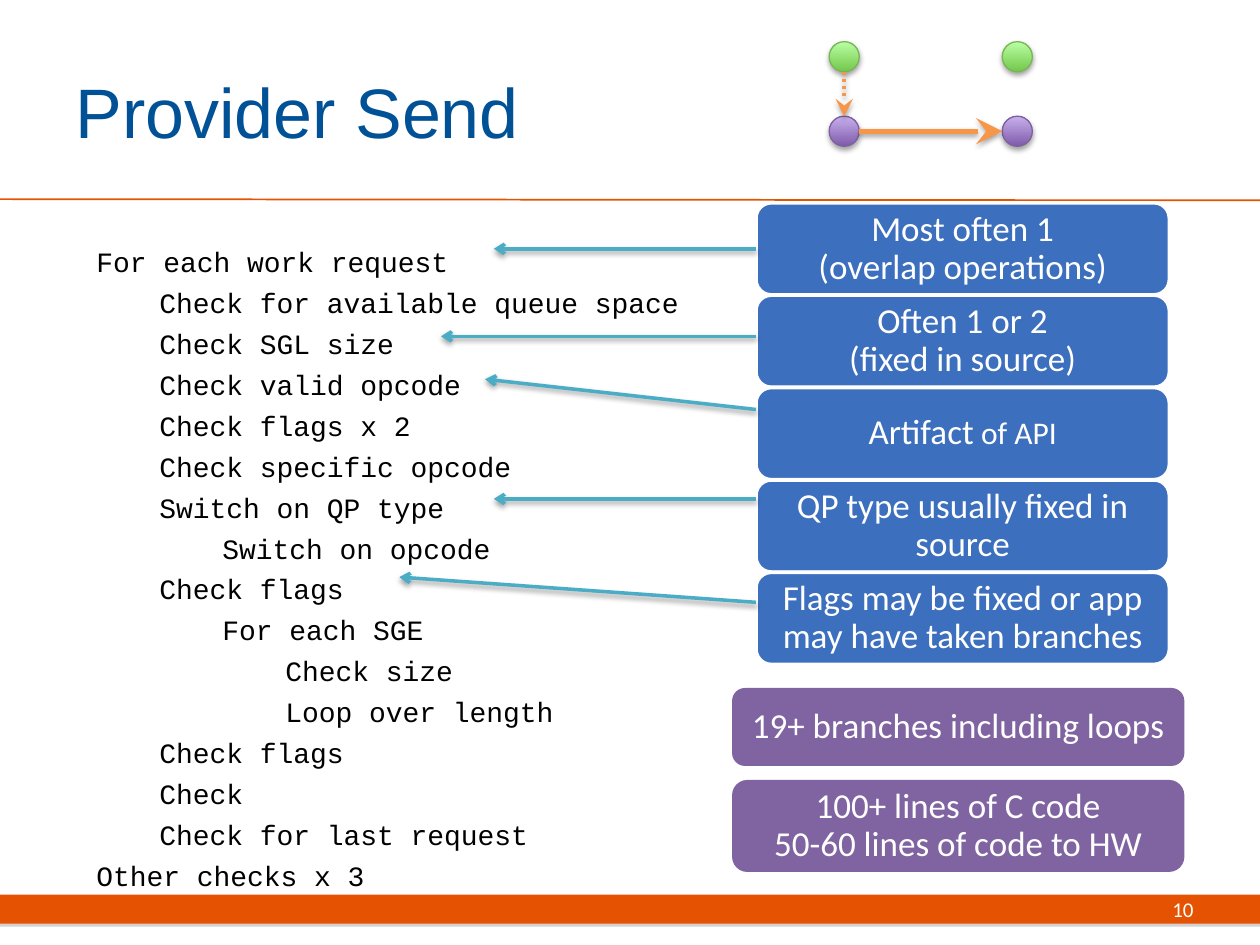
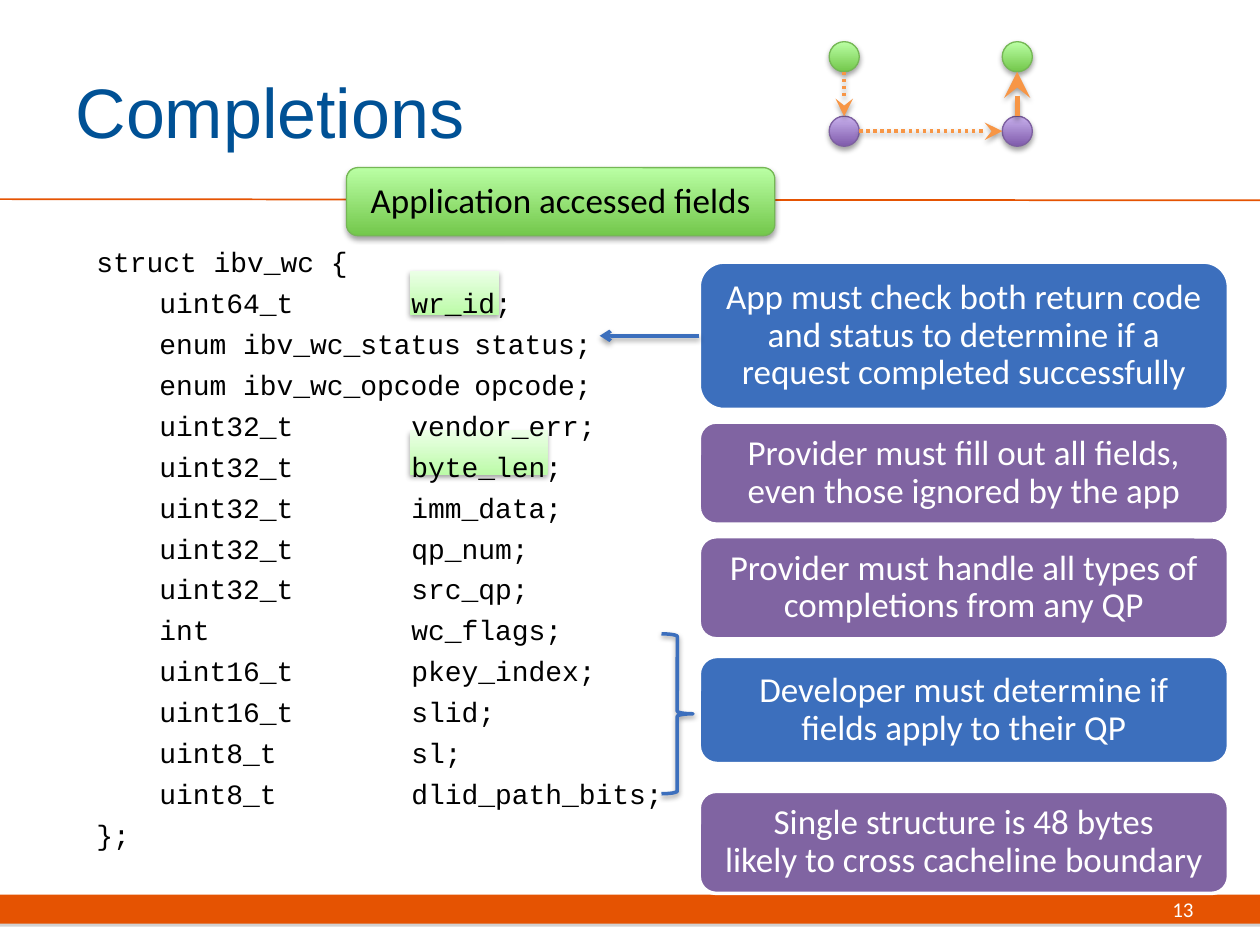
import pptx
import pptx.dml.color
import pptx.enum.dml
import pptx.enum.shapes
import pptx.enum.text
import pptx.oxml.ns
import pptx.util
from dataclasses import dataclass
from lxml import etree

Pt = pptx.util.Pt
qn = pptx.oxml.ns.qn
SHAPE = pptx.enum.shapes.MSO_SHAPE
ALIGN = pptx.enum.text.PP_ALIGN
ANCHOR = pptx.enum.text.MSO_ANCHOR


@dataclass(frozen=True)
class Theme:
    orange: str = "E55302"
    title: str = "005195"
    black: str = "000000"
    white: str = "FFFFFF"
    blue: str = "3C6FBD"
    purple: str = "8064A2"
    teal: str = "4BACC6"
    link: str = "F79646"
    # Gradients run from bottom to top
    green: tuple = ("73C74B", "BAFFA4")
    green_edge: str = "75B755"
    violet: tuple = ("7F5BAB", "C8B0ED")
    violet_edge: str = "7D60A0"
    pale_green: tuple = ("BCFBA8", "ECFFE7")
    # Shadow colour, opacity in percent, blur and distance
    soft_shadow: tuple = ("000000", 36, 3.1, 1.7)
    band_shadow: tuple = ("808080", 35, 0, 1.8)
    title_size: float = 40
    note_size: float = 20
    note_small: float = 18
    code_size: float = 16
    page_size: float = 12
    heading_font: str = "Arial"
    note_font: str = "Calibri"
    code_font: str = "Courier New"


T = Theme()

# Content: provider send
SEND_CODE = [
    "For each work request",
    "\tCheck for available queue space",
    "\tCheck SGL size",
    "\tCheck valid opcode",
    "\tCheck flags x 2",
    "\tCheck specific opcode",
    "\tSwitch on QP type",
    "\t\tSwitch on opcode",
    "\tCheck flags",
    "\t\tFor each SGE",
    "\t\t\tCheck size",
    "\t\t\tLoop over length",
    "\tCheck flags",
    "\tCheck",
    "\tCheck for last request",
    "Other checks x 3",
]
SEND_TABS = [36, 72, 108]
# Note, arrow start height (None: middle of the box), arrow tip
SEND_NOTES = [
    ("Most often 1\v(overlap operations)", None, (282.2, 142.2)),
    ("Often 1 or 2\v(fixed in source)", 192.2, (252, 192.2)),
    ([("Artifact", T.note_size), (" of API", T.note_small)], 234, (277.2, 216.7)),
    ("QP type usually fixed in source", 285.1, (282.2, 285.1)),
    ("Flags may be fixed or app may have taken branches", 344.2, (228.2, 329.8)),
]
SEND_TOTALS = [
    ("19+ branches including loops", 393.1, 44.6),
    ("100+ lines of C code\v50-60 lines of code to HW", 445.7, 52.6),
]

# Content: completions
STRUCT_CODE = [
    "struct ibv_wc {",
    "\tuint64_t\twr_id;",
    "\tenum ibv_wc_status\tstatus;",
    "\tenum ibv_wc_opcode\topcode;",
    "\tuint32_t\tvendor_err;",
    "\tuint32_t\tbyte_len;",
    "\tuint32_t\timm_data;",
    "\tuint32_t\tqp_num;",
    "\tuint32_t\tsrc_qp;",
    "\tint\twc_flags;",
    "\tuint16_t\tpkey_index;",
    "\tuint16_t\tslid;",
    "\tuint8_t\tsl;",
    "\tuint8_t\tdlid_path_bits;",
    "};",
]
STRUCT_TABS = [36, 180, 216]
APP_FIELDS = [(234, 154.6, 51.1, 25.2), (234.4, 246, 78.5, 25.2)]
STATUS_NOTE = "App must check both return code and status to determine if a request completed successfully"
COMPLETION_NOTES = [
    (STATUS_NOTE, T.blue, 149.8, 84.2),
    ("Provider must fill out all fields, even those ignored by the app", T.purple, 241.2, 58.3),
    ("Provider must handle all types of completions from any QP", T.purple, 306.7, 58.3),
    ("Developer must determine if fields apply to their QP", T.blue, 375.1, 61.2),
    ("Single structure is 48 bytes\vlikely to cross cacheline boundary", T.purple, 452.2, 58.3),
]

# Message route: nodes, and links as start, end, active
NODES = {
    "sender app": (482.4, 32.4), "receiver app": (581.3, 32.4),
    "sender": (482.4, 75), "receiver": (581.3, 75),
}
NODE_RADIUS = 8.6
SEND_LINKS = [("sender app", "sender", False), ("sender", "receiver", True)]
COMPLETION_LINKS = [
    ("sender app", "sender", False),
    ("sender", "receiver", False),
    ("receiver", "receiver app", True),
]


# Drawing helpers
def rgb(value):
    return pptx.dml.color.RGBColor.from_string(value)


def style_runs(p, font, size, color):
    for r in p.runs:
        r.font.name, r.font.size = font, Pt(size)
        r.font.color.rgb = rgb(color)


def set_shadow(obj, shadow):
    spPr = obj.element.spPr
    effects = spPr.find(qn("a:effectLst"))
    if effects is None:
        effects = etree.SubElement(spPr, qn("a:effectLst"))
    if shadow:
        color, opacity, blur, dist = shadow
        outer = etree.SubElement(effects, qn("a:outerShdw"), blurRad=str(Pt(blur)),
                                 dist=str(Pt(dist)), dir="5400000", rotWithShape="0")
        clr = etree.SubElement(outer, qn("a:srgbClr"), val=color)
        etree.SubElement(clr, qn("a:alpha"), val=str(opacity * 1000))


def add_shape(s, kind, box, fill=None, edge=None, edge_width=0.75, shadow=None):
    sp = s.shapes.add_shape(kind, *map(Pt, box))
    sp.shadow.inherit = False
    if fill is None:
        sp.fill.background()
    elif isinstance(fill, tuple):
        sp.fill.gradient()
        sp.fill.gradient_angle = 90
        for stop, color in zip(sp.fill.gradient_stops, fill):
            stop.color.rgb = rgb(color)
    else:
        sp.fill.solid()
        sp.fill.fore_color.rgb = rgb(fill)
    if edge:
        sp.line.color.rgb = rgb(edge)
        sp.line.width = Pt(edge_width)
    else:
        sp.line.fill.background()
    set_shadow(sp, shadow)
    return sp


def add_line(s, start, end, color, width, head=None, head_size="med", dotted=False, shadow=None):
    cx = s.shapes.add_connector(pptx.enum.shapes.MSO_CONNECTOR.STRAIGHT, *map(Pt, (*start, *end)))
    cx.line.color.rgb = rgb(color)
    cx.line.width = Pt(width)
    if dotted:
        cx.line.dash_style = pptx.enum.dml.MSO_LINE.ROUND_DOT
    if head:
        etree.SubElement(cx.line._get_or_add_ln(), qn("a:tailEnd"),
                         type=head, w=head_size, len=head_size)
    set_shadow(cx, shadow)
    return cx


def add_note(s, text, box, fill, color=T.white, edge=T.white, edge_width=2, shadow=None):
    sp = add_shape(s, SHAPE.ROUNDED_RECTANGLE, box, fill, edge, edge_width, shadow)
    tf = sp.text_frame
    tf.word_wrap, tf.vertical_anchor = True, ANCHOR.MIDDLE
    tf.margin_left = tf.margin_right = Pt(8.6)
    tf.margin_top = tf.margin_bottom = Pt(5)
    p = tf.paragraphs[0]
    parts = [(text, T.note_size)] if isinstance(text, str) else text
    p.text = parts[0][0]
    for extra, _ in parts[1:]:
        p.add_run().text = extra
    p.alignment, p.line_spacing = ALIGN.CENTER, 0.9
    style_runs(p, T.note_font, T.note_size, color)
    if len(parts) > 1:
        for r, (_, size) in zip(p.runs, parts):
            r.font.size = Pt(size)
    return sp


def add_arrow(s, note, start_y, tip, color):
    left = note.left.pt
    middle = note.top.pt + note.height.pt / 2
    cx = add_line(s, (left, middle if start_y is None else start_y), tip, color, 2,
                  "arrow", shadow=T.soft_shadow)
    if start_y is None:
        cx.begin_connect(note, 1)


def add_code(s, lines, tabs):
    tf = s.shapes.add_textbox(Pt(48), Pt(136), Pt(648), Pt(362)).text_frame
    tf.word_wrap = True
    for i, line in enumerate(lines):
        p = tf.add_paragraph() if i else tf.paragraphs[0]
        tab_list = etree.SubElement(p._p.get_or_add_pPr(), qn("a:tabLst"))
        for pos in tabs:
            etree.SubElement(tab_list, qn("a:tab"), pos=str(Pt(pos)), algn="l")
        p.text = line
        p.space_before = Pt(4.23 if i else 0)
        style_runs(p, T.code_font, T.code_size, T.black)


def add_route(s, links):
    for name, (x, y) in NODES.items():
        fill, edge = (T.green, T.green_edge) if name.endswith("app") else (T.violet, T.violet_edge)
        box = (x - NODE_RADIUS, y - NODE_RADIUS, 2 * NODE_RADIUS, 2 * NODE_RADIUS)
        add_shape(s, SHAPE.FLOWCHART_CONNECTOR, box, fill, edge, shadow=T.soft_shadow)
    for start, end, active in links:
        (x1, y1), (x2, y2) = NODES[start], NODES[end]
        length = abs(x2 - x1) + abs(y2 - y1)
        dx, dy = (NODE_RADIUS * d / length for d in (x2 - x1, y2 - y1))
        add_line(s, (x1 + dx, y1 + dy), (x2 - dx, y2 - dy), T.link, 3 if active else 2,
                 "stealth", "lg", not active, T.soft_shadow)


def add_slide(prs, title, number):
    s = prs.slides.add_slide(prs.slide_layouts[5])
    # Band, rule and page number
    add_shape(s, SHAPE.RECTANGLE, (0, 511.2, 720, 16.6), T.orange, shadow=T.band_shadow)
    add_line(s, (0, 113.8), (720, 114.5), T.orange, 1)
    tf = s.shapes.add_textbox(Pt(603.4), Pt(511.2), Pt(85.7), Pt(16.6)).text_frame
    tf.word_wrap, tf.vertical_anchor = True, ANCHOR.MIDDLE
    tf.margin_top = tf.margin_bottom = 0
    tf.text = str(number)
    tf.paragraphs[0].alignment = ALIGN.RIGHT
    style_runs(tf.paragraphs[0], T.note_font, T.page_size, T.white)
    # Title
    sp = s.shapes.title
    sp.left, sp.top, sp.width, sp.height = map(Pt, (36, 18, 588, 90))
    tf = sp.text_frame
    tf.text = title
    tf.vertical_anchor = ANCHOR.MIDDLE
    tf.paragraphs[0].alignment = ALIGN.LEFT
    style_runs(tf.paragraphs[0], T.heading_font, T.title_size, T.title)
    return s


# Slides
def build_send(prs):
    s = add_slide(prs, "Provider Send", 10)
    add_code(s, SEND_CODE, SEND_TABS)
    for text, top, height in SEND_TOTALS:
        add_note(s, text, (418.3, top, 258.5, height), T.purple, edge=None)
    for i, (text, start_y, tip) in enumerate(SEND_NOTES):
        note = add_note(s, text, (432, 115.9 + 52.8 * i, 236.2, 52.6), T.blue)
        add_arrow(s, note, start_y, tip, T.teal)
    add_route(s, SEND_LINKS)


def build_completions(prs):
    s = add_slide(prs, "Completions", 13)
    for box in APP_FIELDS:
        add_shape(s, SHAPE.RECTANGLE, box, T.pale_green, shadow=T.soft_shadow)
    add_code(s, STRUCT_CODE, STRUCT_TABS)
    add_note(s, "Application accessed fields", (198, 95.8, 244.8, 38.9), T.green,
             T.black, T.green_edge, 0.75, T.soft_shadow)
    for text, fill, top, height in COMPLETION_NOTES:
        note = add_note(s, text, (399.6, top, 302.4, height), fill)
        if text == STATUS_NOTE:
            add_arrow(s, note, None, (342.7, top + height / 2), T.blue)
    add_shape(s, SHAPE.RIGHT_BRACE, (378, 362.2, 18, 91.4), None, T.blue, 2, T.soft_shadow)
    add_route(s, COMPLETION_LINKS)


def main():
    prs = pptx.Presentation()
    prs.slide_width, prs.slide_height = Pt(720), Pt(540)
    build_send(prs)
    build_completions(prs)
    prs.save("out.pptx")


if __name__ == "__main__":
    main()
